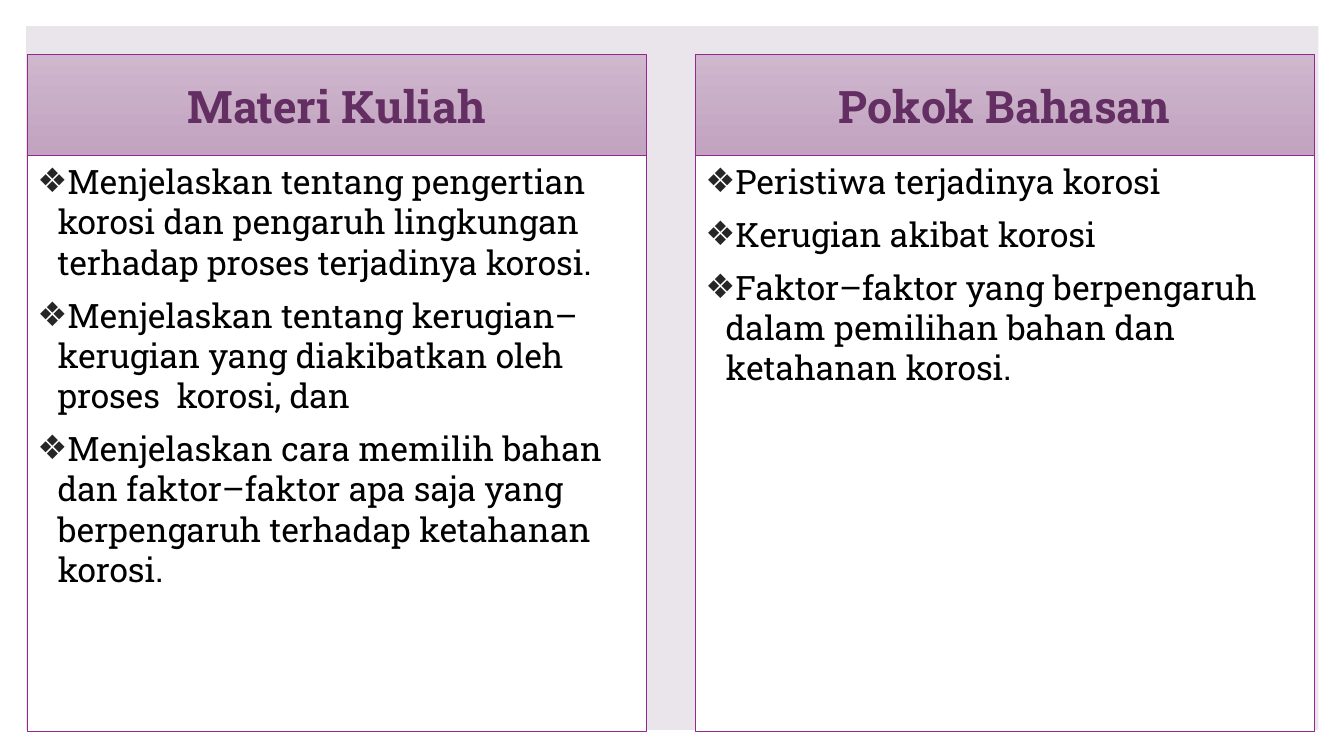
from dataclasses import dataclass

from lxml.etree import SubElement
from pptx import Presentation
from pptx.dml.color import RGBColor
from pptx.enum.shapes import MSO_SHAPE
from pptx.enum.text import MSO_ANCHOR as Anchor, MSO_AUTO_SIZE as AutoSize, PP_ALIGN as Align
from pptx.oxml.ns import qn
from pptx.util import Pt


@dataclass(frozen=True)
class Theme:
    font: str = "Roboto Slab"
    heading_size: int = 32
    body_size: int = 24
    panel: str = "EAE5EB"
    gradient: tuple = ("CFB7CE", "C2A3C0")
    border: str = "92278F"
    heading: str = "632E62"
    body: str = "000000"
    bullet: str = "262626"
    card: str = "FFFFFF"


theme = Theme()
color = RGBColor.from_string


def write(shape, lines, *, size, ink, bold=False, align=Align.LEFT,
          anchor=Anchor.TOP, before=0, bullet=None):
    """Fill a shape with one paragraph per line, bulleted if a bullet is given."""
    frame = shape.text_frame
    frame.text = "\n".join(lines)
    frame.word_wrap = True
    frame.auto_size = AutoSize.NONE
    frame.vertical_anchor = anchor
    for paragraph in frame.paragraphs:
        paragraph.alignment = align
        paragraph.space_before = Pt(before)
        paragraph.line_spacing = 1.0
        font = paragraph.runs[0].font
        font.name, font.size, font.bold = theme.font, Pt(size), bold
        font.color.rgb = color(ink)
        if bullet:
            properties = paragraph._p.get_or_add_pPr()
            properties.set("marL", str(Pt(14.4)))
            properties.set("indent", str(Pt(-14.4)))
            bullet_color = SubElement(properties, qn("a:buClr"))
            SubElement(bullet_color, qn("a:srgbClr"), val=theme.bullet)
            SubElement(properties, qn("a:buChar"), char=bullet)


def place(shape, left, top, width, height, line_width):
    shape.left, shape.top = Pt(left), Pt(top)
    shape.width, shape.height = Pt(width), Pt(height)
    shape.line.color.rgb = color(theme.border)
    shape.line.width = Pt(line_width)


presentation = Presentation()
presentation.slide_width, presentation.slide_height = Pt(960), Pt(540)
comparison_layout = presentation.slide_layouts[4]
slide = presentation.slides.add_slide(comparison_layout)
title = slide.shapes.title.element
title.getparent().remove(title)

# Background panel, sent behind the placeholders
panel = slide.shapes.add_shape(MSO_SHAPE.RECTANGLE, Pt(18.7), Pt(18.7), Pt(923), Pt(502.6))
panel.shadow.inherit = False
panel.fill.solid()
panel.fill.fore_color.rgb = color(theme.panel)
panel.line.fill.background()
panel.element.getparent().insert(2, panel.element)

# Two columns: a gradient heading above a bulleted card
columns = [
    ("Materi Kuliah", [
        "Menjelaskan tentang pengertian korosi dan pengaruh lingkungan terhadap proses terjadinya korosi.",
        "Menjelaskan tentang kerugian–kerugian yang diakibatkan oleh proses  korosi, dan",
        "Menjelaskan cara memilih bahan dan faktor–faktor apa saja yang berpengaruh terhadap ketahanan korosi.",
    ]),
    ("Pokok Bahasan", [
        "Peristiwa terjadinya korosi",
        "Kerugian akibat korosi",
        "Faktor–faktor yang berpengaruh dalam pemilihan bahan dan ketahanan korosi.",
    ]),
]
first_left, column_step, column_width = 19.5, 477.2, 442.2
heading_top, heading_height = 39.1, 72.2
card_top, card_height = heading_top + heading_height, 411.2

for index, (heading_text, points) in enumerate(columns):
    left = first_left + index * column_step
    heading = slide.placeholders[2 * index + 1]
    place(heading, left, heading_top, column_width, heading_height, 0.5)
    heading.fill.gradient()
    heading.fill.gradient_angle = 270
    for stop, shade in zip(heading.fill.gradient_stops, theme.gradient):
        stop.color.rgb = color(shade)
    write(heading, [heading_text], size=theme.heading_size, ink=theme.heading,
          bold=True, align=Align.CENTER, anchor=Anchor.MIDDLE)

    card = slide.placeholders[2 * index + 2]
    place(card, left, card_top, column_width, card_height, 1)
    card.fill.solid()
    card.fill.fore_color.rgb = color(theme.card)
    write(card, points, size=theme.body_size, ink=theme.body,
          before=9, bullet="❖")

presentation.save("out.pptx")
